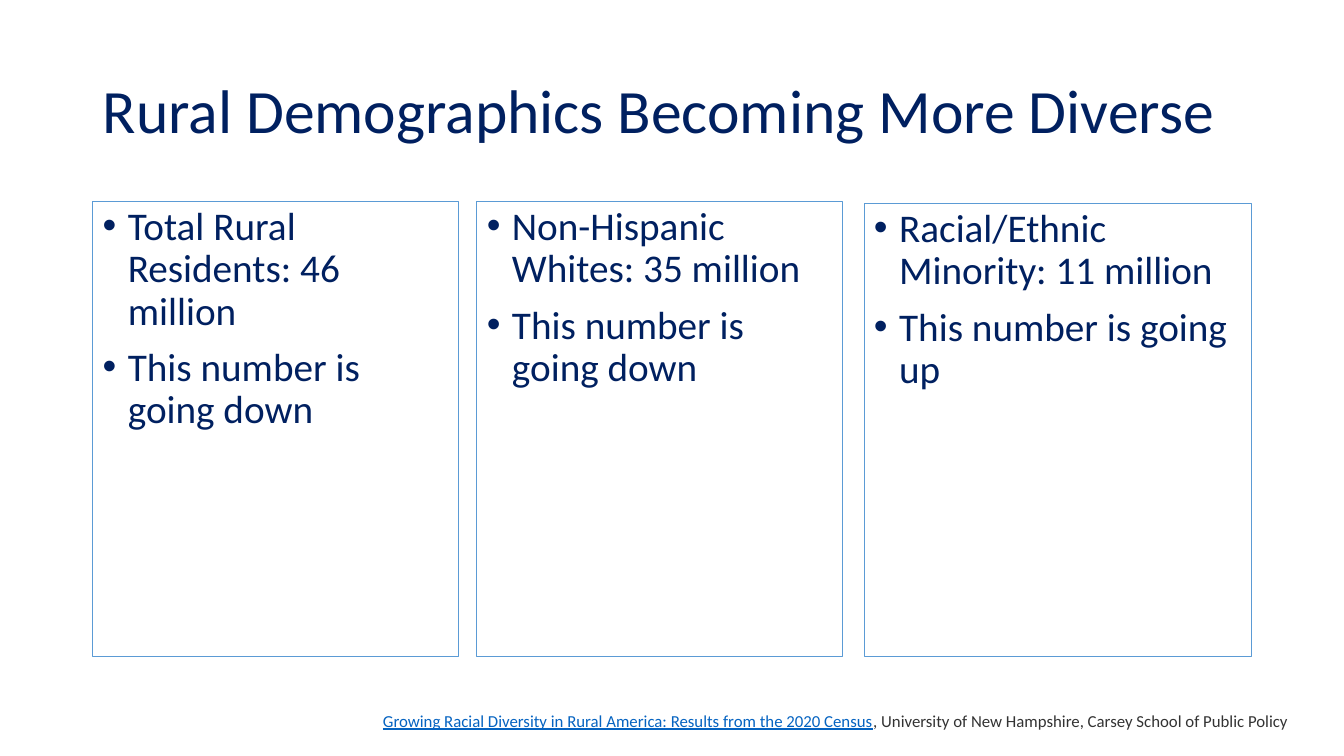
from dataclasses import dataclass

from lxml.etree import SubElement
from pptx import Presentation
from pptx.dml.color import RGBColor
from pptx.enum.shapes import MSO_SHAPE
from pptx.enum.text import MSO_ANCHOR, PP_ALIGN
from pptx.oxml.ns import qn
from pptx.slide import Slide
from pptx.text.text import Font
from pptx.util import Inches, Pt


@dataclass(frozen=True)
class Theme:
    font: str = "Calibri"
    navy: RGBColor = RGBColor(0x00, 0x20, 0x60)
    outline: RGBColor = RGBColor(0x5B, 0x9B, 0xD5)
    citation_blue: RGBColor = RGBColor(0x05, 0x63, 0xC1)
    grey: RGBColor = RGBColor(0x33, 0x33, 0x33)
    title_size: int = 44
    body_size: int = 28
    source_size: int = 12


@dataclass(frozen=True)
class Panel:
    left: float
    top: float
    width: float
    points: tuple[str, ...]


THEME = Theme()
PANEL_BOTTOM = 6.51
PANELS = (
    Panel(0.92, 2, 3.63, ("Total Rural Residents: 46 million", "This number is going down")),
    Panel(4.73, 2, 3.63, ("Non-Hispanic Whites: 35 million", "This number is going down")),
    Panel(8.57, 2.02, 3.84, ("Racial/Ethnic Minority: 11 million", "This number is going up")),
)


def style_font(font: Font, size: int, color: RGBColor) -> None:
    font.name = THEME.font
    font.size = Pt(size)
    font.color.rgb = color


def add_title(page: Slide, text: str) -> None:
    box = page.shapes.add_textbox(Inches(0.92), Inches(0.4), Inches(11.5), Inches(1.45))
    frame = box.text_frame
    frame.word_wrap = True
    frame.vertical_anchor = MSO_ANCHOR.MIDDLE
    frame.text = text
    para = frame.paragraphs[0]
    para.line_spacing = 0.9
    style_font(para.runs[0].font, THEME.title_size, THEME.navy)


def add_panel(page: Slide, panel: Panel) -> None:
    box = page.shapes.add_shape(
        MSO_SHAPE.RECTANGLE, Inches(panel.left), Inches(panel.top),
        Inches(panel.width), Inches(PANEL_BOTTOM - panel.top))
    box.shadow.inherit = False
    box.fill.background()
    box.line.color.rgb = THEME.outline
    box.line.width = Pt(0.75)
    frame = box.text_frame
    frame.word_wrap = True
    frame.vertical_anchor = MSO_ANCHOR.TOP
    frame.text = "\n".join(panel.points)
    for index, para in enumerate(frame.paragraphs):
        para.alignment = PP_ALIGN.LEFT
        para.line_spacing = 0.9
        para.space_before = Pt(10 if index else 0)
        # Hanging bullet
        properties = para._p.get_or_add_pPr()
        properties.set("marL", str(Inches(0.25)))
        properties.set("indent", str(Inches(-0.25)))
        SubElement(properties, qn("a:buFont")).set("typeface", "Arial")
        SubElement(properties, qn("a:buChar")).set("char", "•")
        style_font(para.runs[0].font, THEME.body_size, THEME.navy)


def add_source(page: Slide, report: str, publisher: str) -> None:
    box = page.shapes.add_textbox(Inches(3.7), Inches(7), Inches(9.34), Inches(0.3))
    frame = box.text_frame
    frame.word_wrap = True
    para = frame.paragraphs[0]
    for text, color, underlined in ((report, THEME.citation_blue, True),
                                    (publisher, THEME.grey, False)):
        span = para.add_run()
        span.text = text
        style_font(span.font, THEME.source_size, color)
        span.font.underline = underlined


def main() -> None:
    deck = Presentation()
    deck.slide_width, deck.slide_height = Inches(13.33), Inches(7.5)
    page = deck.slides.add_slide(deck.slide_layouts[6])

    # Heading
    add_title(page, "Rural Demographics Becoming More Diverse")
    # Population panels
    for panel in PANELS:
        add_panel(page, panel)
    # Source line
    add_source(page, "Growing Racial Diversity in Rural America: Results from the 2020 Census",
               ", University of New Hampshire, Carsey School of Public Policy")

    deck.save("out.pptx")


if __name__ == "__main__":
    main()
